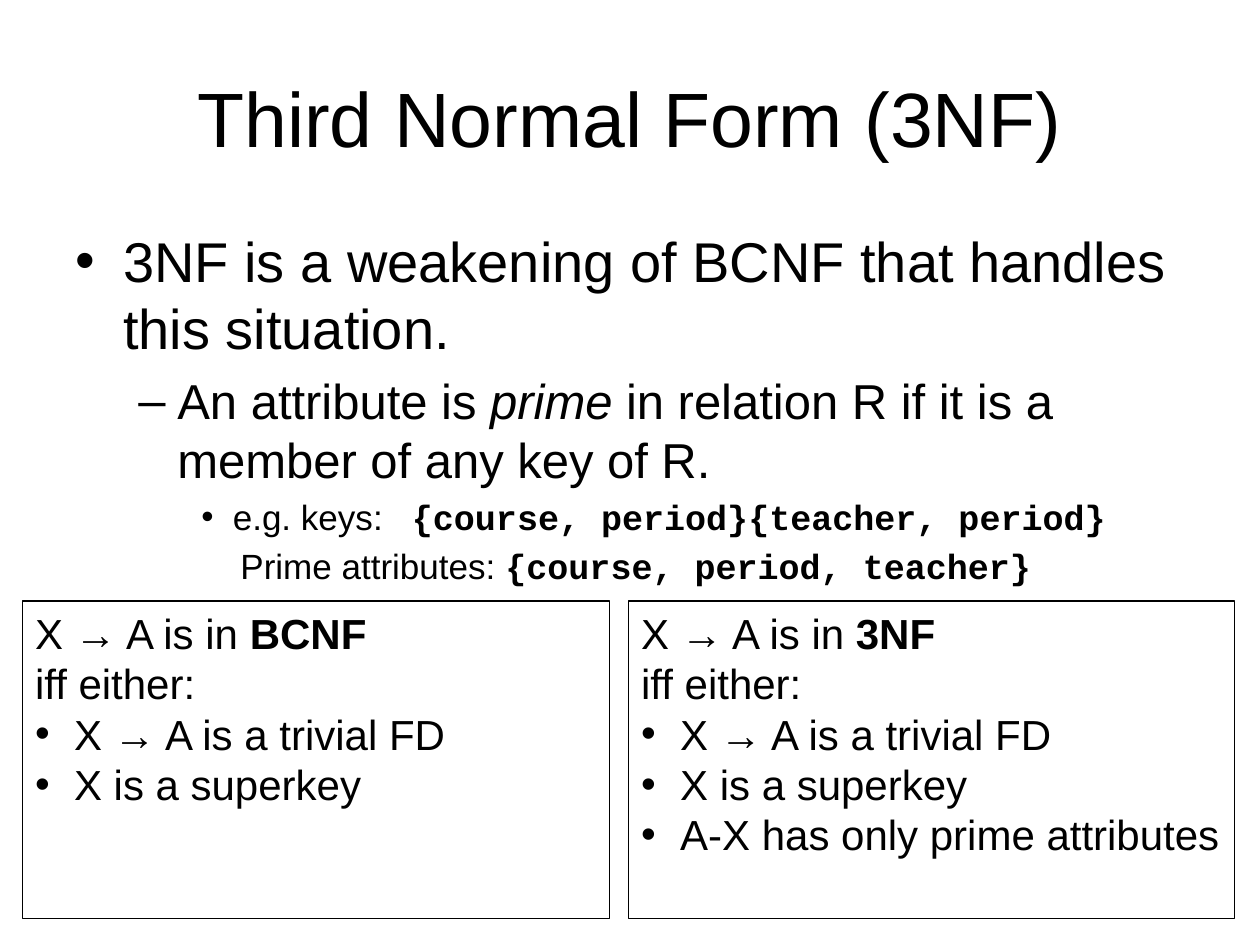
from lxml.etree import SubElement
from pptx import Presentation
from pptx.dml.color import RGBColor
from pptx.enum.shapes import MSO_SHAPE
from pptx.enum.text import MSO_ANCHOR, PP_ALIGN
from pptx.oxml.ns import qn
from pptx.util import Inches, Pt

WIDTH, HEIGHT = 10, 7.5
MARGIN = 0.5
BLACK = "000000"
CODE = {"name": "Courier New", "bold": True}
BOLD = {"bold": True}
ITALIC = {"italic": True}
WIDE_GAP = {"spacing": 11}

LEVELS = {
    "title": {"size": 44},
    "point": {"size": 32, "left": 0.38, "hang": 0.38, "before": 6.4, "bullet": "•"},
    "detail": {"size": 28, "left": 0.81, "hang": 0.31, "before": 5.6, "bullet": "–"},
    "example": {"size": 20, "left": 1.25, "hang": 0.25, "before": 4, "bullet": "•"},
    "continued": {"size": 20, "left": 1.31, "before": 4},
    "rule": {"size": 24},
    "condition": {"size": 24, "left": 0.31, "hang": 0.31, "bullet": "•"},
}

TITLE = [("title", ["Third Normal Form (3NF)"])]
BODY = [
    ("point", ["3NF is a weakening of BCNF that handles this situation."]),
    ("detail", ["An attribute is ", ("prime", ITALIC),
                " in relation R if it is a member of any key of R."]),
    ("example", ["e.g. keys:", (" ", WIDE_GAP),
                 ("{course, period}{teacher, period}", CODE)]),
    ("continued", ["Prime attributes: ", ("{course, period, teacher}", CODE)]),
]
SHARED_CONDITIONS = ["X → A is a trivial FD", "X is a superkey"]
NORMAL_FORMS = [
    ("BCNF", 0.18, 4.66, SHARED_CONDITIONS),
    ("3NF", 4.99, 4.81, SHARED_CONDITIONS + ["A-X has only prime attributes"]),
]


def color(value):
    return RGBColor.from_string(value)


def add_run(paragraph, text, size, extra):
    run = paragraph.add_run()
    run.text = text
    font_format = {"name": "Arial", "size": Pt(size), **extra}
    spacing = font_format.pop("spacing", None)
    for attribute, value in font_format.items():
        setattr(run.font, attribute, value)
    run.font.color.rgb = color(BLACK)
    if spacing:
        run.font._element.set("spc", str(spacing * 100))


def write(shape, content, anchor=MSO_ANCHOR.TOP, alignment=PP_ALIGN.LEFT):
    frame = shape.text_frame
    frame.word_wrap = True
    frame.vertical_anchor = anchor
    for index, (level, runs) in enumerate(content):
        style = LEVELS[level]
        paragraph = frame.add_paragraph() if index else frame.paragraphs[0]
        paragraph.alignment = alignment
        paragraph.space_before = Pt(style.get("before", 0))
        properties = paragraph._p.get_or_add_pPr()
        properties.set("marL", str(Inches(style.get("left", 0))))
        properties.set("indent", str(-Inches(style.get("hang", 0))))
        if "bullet" in style:
            SubElement(properties, qn("a:buFont"), typeface="Arial")
            SubElement(properties, qn("a:buChar"), char=style["bullet"])
        for item in runs:
            text, extra = (item, {}) if isinstance(item, str) else item
            add_run(paragraph, text, style["size"], extra)


def add_text(slide, top, height, content, **layout):
    box = slide.shapes.add_textbox(
        Inches(MARGIN), Inches(top), Inches(WIDTH - 2 * MARGIN), Inches(height))
    write(box, content, **layout)


def add_normal_form(slide, name, left, width, conditions):
    shape = slide.shapes.add_shape(
        MSO_SHAPE.RECTANGLE, Inches(left), Inches(4.77), Inches(width), Inches(2.52))
    shape.shadow.inherit = False
    shape.fill.background()
    shape.line.color.rgb = color(BLACK)
    shape.line.width = Pt(0.75)
    write(shape, [("rule", ["X → A is in ", (name, BOLD)]), ("rule", ["iff either:"])]
          + [("condition", [condition]) for condition in conditions])


def main():
    presentation = Presentation()
    presentation.slide_width, presentation.slide_height = Inches(WIDTH), Inches(HEIGHT)
    slide = presentation.slides.add_slide(presentation.slide_layouts[6])
    add_text(slide, 0.3, 1.25, TITLE, anchor=MSO_ANCHOR.MIDDLE, alignment=PP_ALIGN.CENTER)
    add_text(slide, 1.75, 2.24, BODY)
    for normal_form in NORMAL_FORMS:
        add_normal_form(slide, *normal_form)
    presentation.save("out.pptx")


if __name__ == "__main__":
    main()
